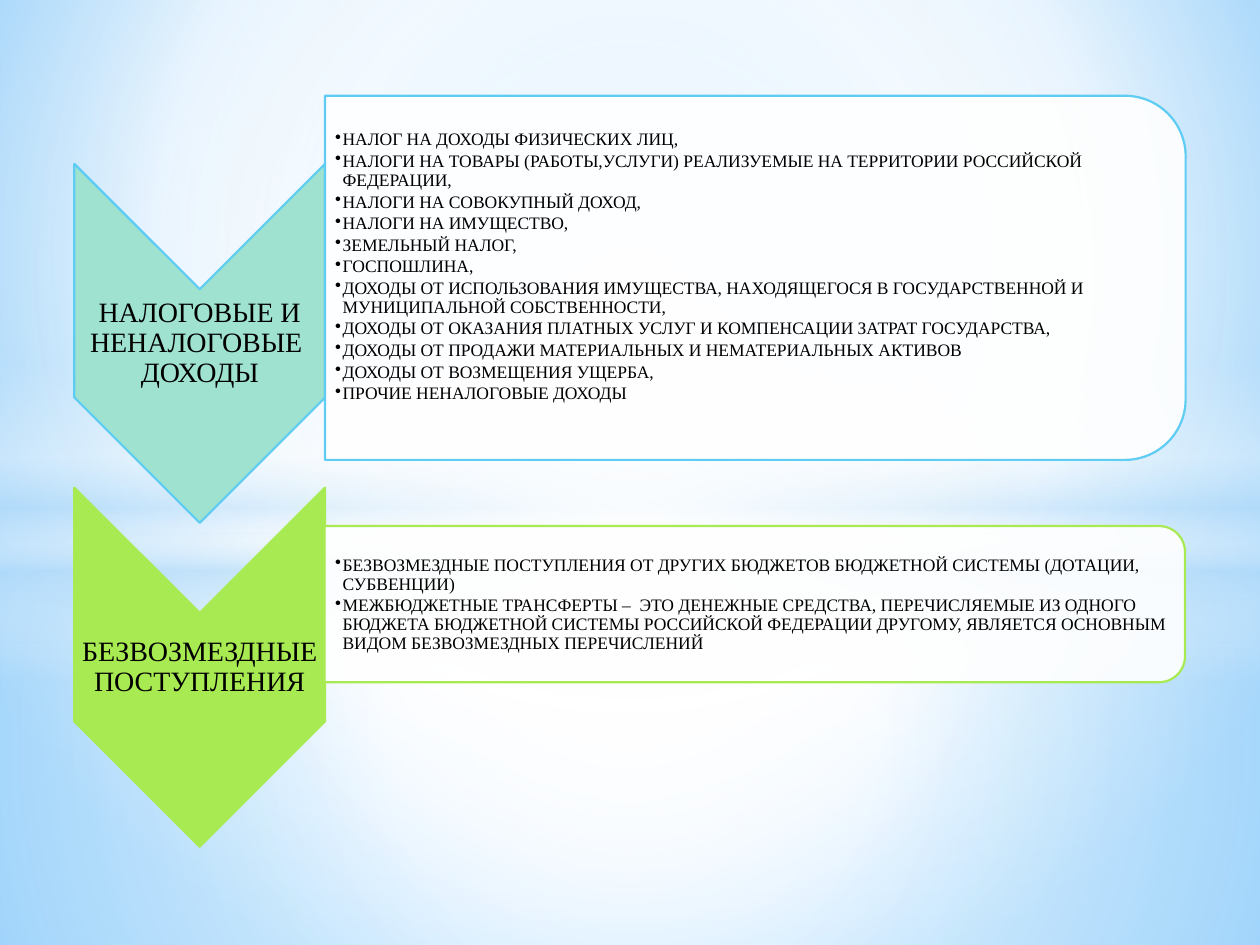
from lxml import etree
from pptx import Presentation
from pptx.dml.color import RGBColor
from pptx.enum.shapes import MSO_SHAPE
from pptx.enum.text import MSO_ANCHOR, PP_ALIGN
from pptx.oxml.ns import qn
from pptx.util import Inches, Pt


def color(value):
    return RGBColor.from_string(value)


def add_text(text, left, top, width, height, size, after, align=PP_ALIGN.LEFT,
             inset_left=0.01, inset_bottom=0.01, bullet=None):
    box = slide.shapes.add_textbox(Inches(left), Inches(top), Inches(width), Inches(height))
    frame = box.text_frame
    frame.word_wrap = True
    frame.vertical_anchor = MSO_ANCHOR.MIDDLE
    frame.margin_left = Inches(inset_left)
    frame.margin_top = frame.margin_right = Inches(0.01)
    frame.margin_bottom = Inches(inset_bottom)
    frame.text = text
    for paragraph in frame.paragraphs:
        paragraph.alignment = align
        paragraph.line_spacing = 0.9
        paragraph.space_after = Pt(after)
        paragraph.font.size = Pt(size)
        for run in paragraph.runs:
            run.font.name = "Times New Roman"
            run.font.size = Pt(size)
            run.font.color.rgb = color("000000")
        if bullet:
            paragraph.level = 1
            properties = paragraph._p.get_or_add_pPr()
            properties.set("marL", str(Inches(0.06)))
            properties.set("indent", str(-Inches(0.06)))
            etree.SubElement(properties, qn("a:buChar")).set("char", bullet)


presentation = Presentation()
presentation.slide_width = Inches(10)
presentation.slide_height = Inches(7.5)
slide = presentation.slides.add_slide(presentation.slide_layouts[6])

center = (50, 50, 50, 50)
glows = [
    (MSO_SHAPE.RECTANGLE, 4.23, 3.27, center,
     [(0, "FFFFFF", 91), (37, "FFFFFF", 76), (100, "B4DCFA", 79)]),
    (MSO_SHAPE.RECTANGLE, 0, 4.23, center,
     [(0, "FFFFFF", 89), (48, "FFFFFF", 62), (100, "B4DCFA", 79)]),
    (MSO_SHAPE.RECTANGLE, 2.9, 2.5, None,
     [(0, "FFFFFF", 0), (29, "FFFFFF", 30), (45, "B4DCFA", 40),
      (55, "FFFFFF", 26), (65, "B4DCFA", 60), (100, "FFFFFF", 0)]),
    (MSO_SHAPE.OVAL, 1.75, 5.58, center, [(0, "FFFFFF", 100), (54, "FFFFFF", 0)]),
]
slide.background.fill.gradient()
surfaces = [(slide._element, (20, 10, 20, 60),
             [(0, "9ED5FF", 100), (60, "FFFFFF", 100), (100, "5BB9FF", 100)])]
for geometry, top, height, focus, stops in glows:
    glow = slide.shapes.add_shape(geometry, 0, Inches(top), Inches(10), Inches(height))
    glow.shadow.inherit = False
    glow.line.fill.background()
    glow.fill.gradient()
    surfaces.append((glow._element, focus, stops))

for surface, focus, stops in surfaces:
    gradient = next(surface.iter(qn("a:gradFill")))
    for part in list(gradient):
        gradient.remove(part)
    gradient.set("rotWithShape", "1")
    stop_list = etree.SubElement(gradient, qn("a:gsLst"))
    for position, tint, opacity in stops:
        stop = etree.SubElement(stop_list, qn("a:gs"), pos=str(position * 1000))
        shade = etree.SubElement(stop, qn("a:srgbClr"), val=str(color(tint)))
        etree.SubElement(shade, qn("a:alpha"), val=str(opacity * 1000))
    if focus:
        circle = etree.SubElement(gradient, qn("a:path"), path="circle")
        edges = {side: str(value * 1000) for side, value in zip("ltrb", focus)}
        etree.SubElement(circle, qn("a:fillToRect"), **edges)
    else:
        etree.SubElement(gradient, qn("a:lin"), ang="5400000", scaled="0")

tax_items = [
    "НАЛОГ НА ДОХОДЫ ФИЗИЧЕСКИХ ЛИЦ,",
    "НАЛОГИ НА ТОВАРЫ (РАБОТЫ,УСЛУГИ) РЕАЛИЗУЕМЫЕ НА ТЕРРИТОРИИ РОССИЙСКОЙ ФЕДЕРАЦИИ,",
    "НАЛОГИ НА СОВОКУПНЫЙ ДОХОД,",
    "НАЛОГИ НА ИМУЩЕСТВО,",
    "ЗЕМЕЛЬНЫЙ НАЛОГ,",
    "ГОСПОШЛИНА,",
    "ДОХОДЫ ОТ ИСПОЛЬЗОВАНИЯ ИМУЩЕСТВА, НАХОДЯЩЕГОСЯ В ГОСУДАРСТВЕННОЙ И "
    "МУНИЦИПАЛЬНОЙ СОБСТВЕННОСТИ,",
    "ДОХОДЫ ОТ ОКАЗАНИЯ ПЛАТНЫХ УСЛУГ И КОМПЕНСАЦИИ ЗАТРАТ ГОСУДАРСТВА,",
    "ДОХОДЫ ОТ ПРОДАЖИ МАТЕРИАЛЬНЫХ И НЕМАТЕРИАЛЬНЫХ АКТИВОВ",
    "ДОХОДЫ ОТ ВОЗМЕЩЕНИЯ УЩЕРБА,",
    "ПРОЧИЕ НЕНАЛОГОВЫЕ ДОХОДЫ",
]
transfer_items = [
    "БЕЗВОЗМЕЗДНЫЕ ПОСТУПЛЕНИЯ ОТ ДРУГИХ БЮДЖЕТОВ БЮДЖЕТНОЙ СИСТЕМЫ (ДОТАЦИИ, СУБВЕНЦИИ)",
    "МЕЖБЮДЖЕТНЫЕ ТРАНСФЕРТЫ –  ЭТО ДЕНЕЖНЫЕ СРЕДСТВА, ПЕРЕЧИСЛЯЕМЫЕ ИЗ ОДНОГО "
    "БЮДЖЕТА БЮДЖЕТНОЙ СИСТЕМЫ РОССИЙСКОЙ ФЕДЕРАЦИИ ДРУГОМУ, ЯВЛЯЕТСЯ ОСНОВНЫМ "
    "ВИДОМ БЕЗВОЗМЕЗДНЫХ ПЕРЕЧИСЛЕНИЙ",
]
incomes = [
    ("НАЛОГОВЫЕ И НЕНАЛОГОВЫЕ  ДОХОДЫ", tax_items, 1.73, "9EE2CF", "5ECCF3",
     (4.55, -1.21, 2.89), (0.9, 6.69, 2.61), 0.18),
    ("БЕЗВОЗМЕЗДНЫЕ ПОСТУПЛЕНИЯ", transfer_items, 4.3, "A7EA52", "A7EA52",
     (5.37, 1.38, 1.24), (4.24, 6.77, 1.12), 0.01),
]
for title, items, top, tint, outline, panel, details, inset_bottom in incomes:
    panel_left, panel_top, panel_width = panel
    details_top, details_width, details_height = details
    pieces = [
        (MSO_SHAPE.CHEVRON, 0.16, top, 2.85, 1.99, tint, 100),
        (MSO_SHAPE.ROUND_2_SAME_RECTANGLE, panel_left, panel_top, panel_width, 6.83,
         "FFFFFF", 90),
    ]
    for geometry, left, piece_top, width, height, fill, opacity in pieces:
        piece = slide.shapes.add_shape(geometry, Inches(left), Inches(piece_top),
                                       Inches(width), Inches(height))
        piece.rotation = 90
        piece.shadow.inherit = False
        piece.fill.solid()
        piece.fill.fore_color.rgb = color(fill)
        piece.line.color.rgb = color(outline)
        piece.line.width = Pt(1.25)
        if opacity < 100:
            shade = next(piece._element.spPr.iter(qn("a:srgbClr")))
            etree.SubElement(shade, qn("a:alpha"), val=str(opacity * 1000))
    add_text(title, 0.59, top + 0.57, 1.99, 0.85, size=16, after=5.6,
             align=PP_ALIGN.CENTER)
    add_text("\n".join(items), 2.58, details_top, details_width, details_height,
             size=10, after=1.5, inset_left=0.08, inset_bottom=inset_bottom, bullet="•")

presentation.save("out.pptx")
